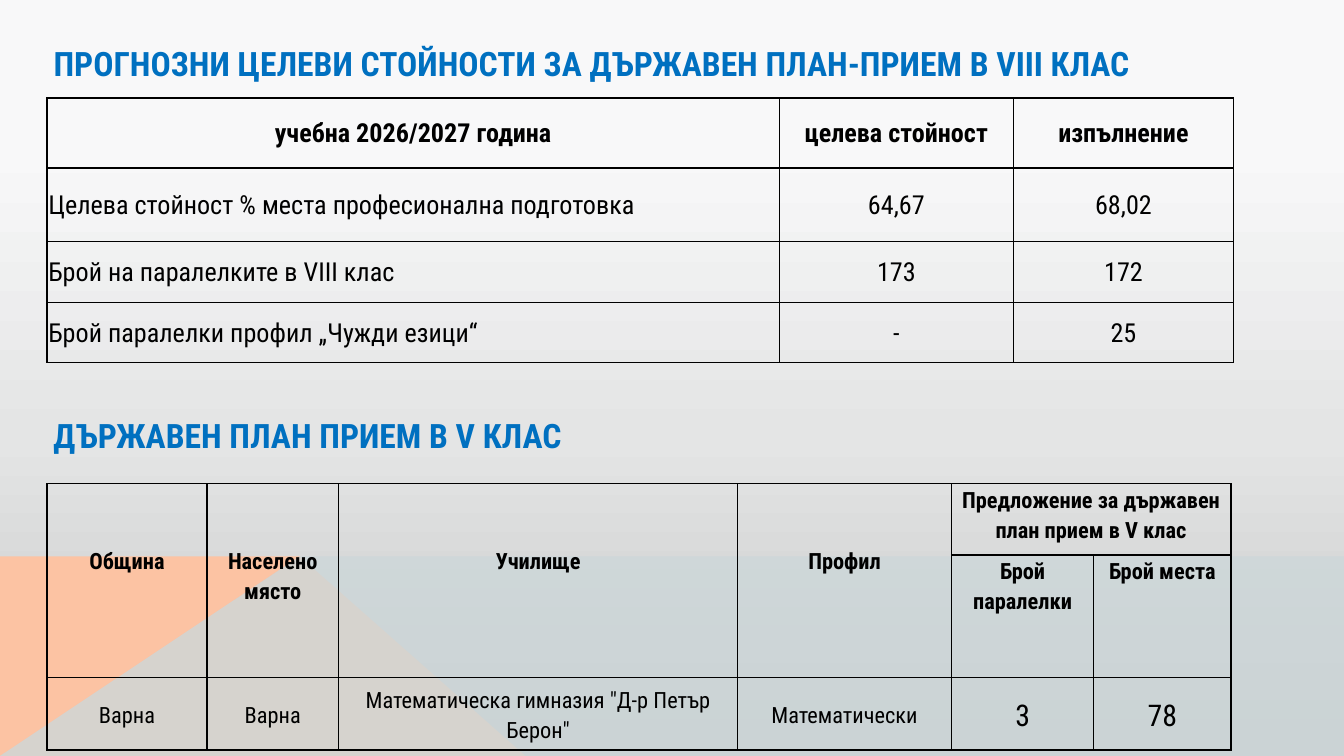
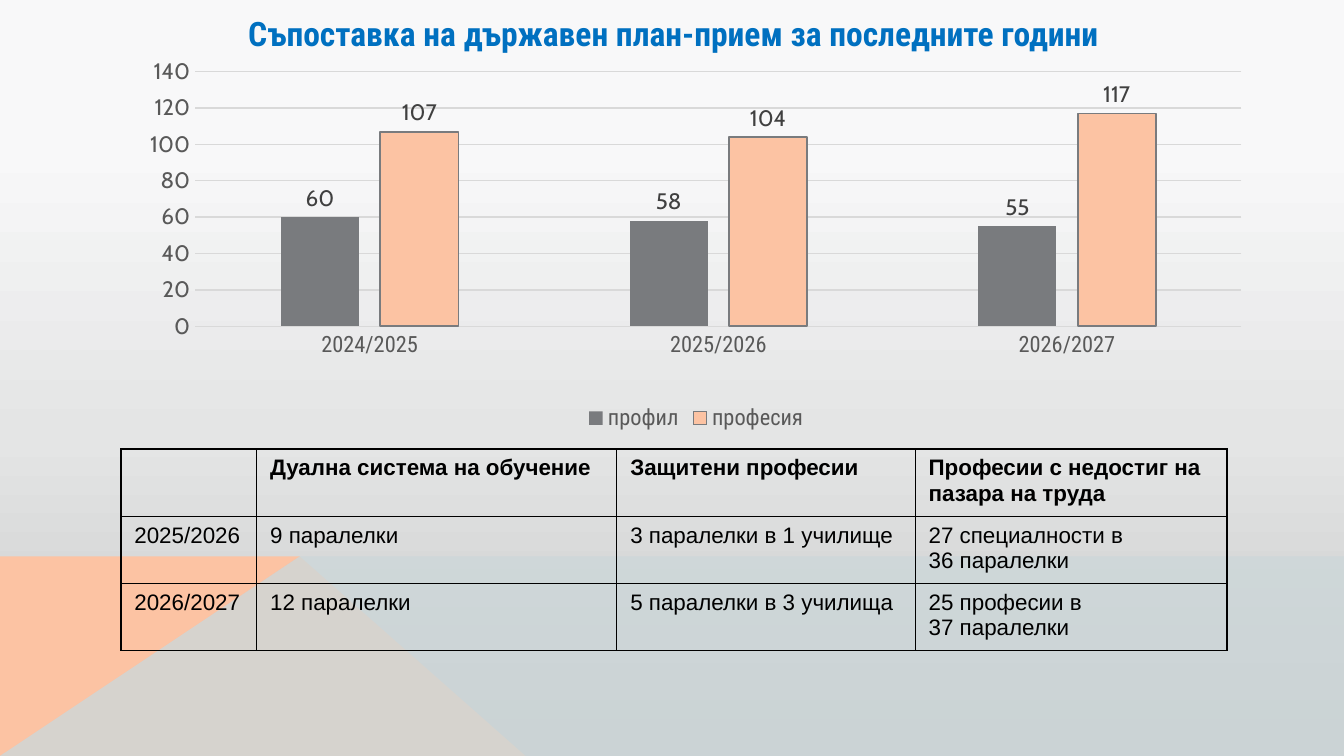
from dataclasses import dataclass
from typing import Optional

import lxml.etree
import pptx
import pptx.chart.chart
import pptx.chart.data
import pptx.dml.color
import pptx.dml.fill
import pptx.enum.chart
import pptx.enum.text
import pptx.oxml.ns
import pptx.slide
import pptx.table
import pptx.text.text
import pptx.util

ALIGN = pptx.enum.text.PP_ALIGN
ANCHOR = pptx.enum.text.MSO_ANCHOR
GRID_COLUMNS, GRID_ROWS = 100, 56.25
GRID_STEP = pptx.util.Inches(0.1)


@dataclass(frozen=True)
class Theme:
    heading: str = "0070C0"
    text: str = "000000"
    axis_text: str = "595959"
    label_text: str = "404040"
    grid_line: str = "D9D9D9"
    grey: str = "797B7E"
    peach: str = "FCC3A3"
    mist: str = "CDD7D9"
    background: tuple[tuple[int, str], ...] = (
        (19, "F8F8F9"), (58, "E4E5E5"), (100, "C3C4C5"), (100, "D7D7D8"))
    main_font: str = "Roboto Condensed"
    number_font: str = "Cabin"
    plain_font: str = "Arial"
    heading_size: float = 18
    large_size: float = 16
    table_size: float = 14
    small_size: float = 12
    thin_line: float = 0.75


THEME = Theme()


@dataclass(frozen=True)
class Box:
    """A place on the grid, in columns and rows."""
    left: float
    top: float
    width: float
    height: float

    def lengths(self) -> tuple[int, int, int, int]:
        return grid(self.left), grid(self.top), grid(self.width), grid(self.height)


@dataclass(frozen=True)
class Cell:
    text: str
    bold: bool = False
    alignment: ALIGN = ALIGN.CENTER
    size: Optional[float] = None
    anchor: Optional[ANCHOR] = None
    margin_top: Optional[float] = None
    row_span: int = 1
    column_span: int = 1


@dataclass(frozen=True)
class TableSpec:
    left: float
    top: float
    columns: tuple[float, ...]
    rows: tuple[float, ...]
    cells: tuple[tuple[Optional[Cell], ...], ...]
    size: float
    font: str = THEME.main_font
    side_margin: float = 0
    margin_top: float = 0
    margin_bottom: float = 0
    line_spacing: float = 1.0
    anchor: ANCHOR = ANCHOR.MIDDLE


@dataclass(frozen=True)
class SeriesSpec:
    name: str
    values: tuple[int, ...]
    color: str
    outline: Optional[str] = None


def grid(steps: float) -> int:
    return round(steps * GRID_STEP)


def rgb(color: str) -> pptx.dml.color.RGBColor:
    return pptx.dml.color.RGBColor.from_string(color)


def add_xml(parent: lxml.etree._Element, tag: str, **attributes: str) -> lxml.etree._Element:
    return lxml.etree.SubElement(parent, pptx.oxml.ns.qn(tag), attributes)


def set_solid(fill: pptx.dml.fill.FillFormat, color: str) -> None:
    fill.solid()
    fill.fore_color.rgb = rgb(color)


def set_font(font: pptx.text.text.Font, *, name: str, color: str,
             size: float = THEME.small_size, bold: bool = False) -> None:
    font.name, font.size, font.bold = name, pptx.util.Pt(size), bold
    font.color.rgb = rgb(color)


def write_text(frame: pptx.text.text.TextFrame, text: str, *, name: str = THEME.main_font,
               size: float, color: str = THEME.text, bold: bool = False,
               alignment: ALIGN = ALIGN.LEFT, line_spacing: float = 1.0) -> None:
    frame.word_wrap = True
    frame.text = text
    for paragraph in frame.paragraphs:
        paragraph.alignment = alignment
        paragraph.line_spacing = line_spacing
        for run in paragraph.runs:
            set_font(run.font, name=name, color=color, size=size, bold=bold)


def set_background(presentation: pptx.presentation.Presentation) -> None:
    master = presentation.slide_master
    fill = master.background.fill
    fill.gradient()
    fill.gradient_angle = 270
    stops = master.element.xpath(".//p:bg//a:gsLst")[0]
    for stop in list(stops):
        stops.remove(stop)
    for position, color in THEME.background:
        stop = add_xml(stops, "a:gs", pos=str(position * 1000))
        add_xml(stop, "a:srgbClr", val=color)


def add_slope(slide: pptx.slide.Slide, points: list[tuple[float, float]], color: str,
              opacity: int = 100) -> None:
    start, *others = [(grid(x), grid(y)) for x, y in points]
    builder = slide.shapes.build_freeform(*start)
    builder.add_line_segments(others, close=True)
    shape = builder.convert_to_shape()
    shape.shadow.inherit = False
    shape.line.fill.background()
    set_solid(shape.fill, color)
    if opacity < 100:
        color_element = shape.element.xpath("./p:spPr/a:solidFill/a:srgbClr")[0]
        add_xml(color_element, "a:alpha", val=str(opacity * 1000))


def add_base_slide(presentation: pptx.presentation.Presentation) -> pptx.slide.Slide:
    """Add a blank slide with the two slopes along its foot."""
    slide = presentation.slides.add_slide(presentation.slide_layouts[6])
    horizon, peak = 41.4, 22.3
    foot = (0, GRID_ROWS)
    add_slope(slide, [foot, (0, horizon), (peak, horizon), (39.1, GRID_ROWS)], THEME.peach)
    add_slope(slide, [foot, (peak, horizon), (GRID_COLUMNS, horizon),
                      (GRID_COLUMNS, GRID_ROWS)], THEME.mist, opacity=80)
    return slide


def add_heading(slide: pptx.slide.Slide, box: Box, text: str,
                alignment: ALIGN = ALIGN.LEFT) -> None:
    frame = slide.shapes.add_textbox(*box.lengths()).text_frame
    frame.vertical_anchor = ANCHOR.MIDDLE
    write_text(frame, text, size=THEME.heading_size, color=THEME.heading, bold=True,
               alignment=alignment)


def set_borders(cell: pptx.table._Cell) -> None:
    properties = cell._tc.get_or_add_tcPr()
    for index, side in enumerate(("a:lnL", "a:lnR", "a:lnT", "a:lnB")):
        line = add_xml(properties, side, w=str(pptx.util.Pt(THEME.thin_line)))
        add_xml(add_xml(line, "a:solidFill"), "a:srgbClr", val=THEME.text)
        properties.insert(index, line)


def fill_cell(cell: pptx.table._Cell, content: Cell, spec: TableSpec) -> None:
    margin_top = spec.margin_top if content.margin_top is None else content.margin_top
    cell.margin_left = cell.margin_right = grid(spec.side_margin)
    cell.margin_top, cell.margin_bottom = grid(margin_top), grid(spec.margin_bottom)
    cell.vertical_anchor = content.anchor or spec.anchor
    write_text(cell.text_frame, content.text, name=spec.font, size=content.size or spec.size,
               bold=content.bold, alignment=content.alignment, line_spacing=spec.line_spacing)


def add_table(slide: pptx.slide.Slide, spec: TableSpec) -> None:
    box = Box(spec.left, spec.top, sum(spec.columns), sum(spec.rows))
    table = slide.shapes.add_table(len(spec.rows), len(spec.columns), *box.lengths()).table
    table.first_row = table.horz_banding = False
    for column, width in zip(table.columns, spec.columns):
        column.width = grid(width)
    for row, height in zip(table.rows, spec.rows):
        row.height = grid(height)
    for row_index, row in enumerate(spec.cells):
        for column_index, content in enumerate(row):
            cell = table.cell(row_index, column_index)
            cell.fill.background()
            set_borders(cell)
            if content is None:
                continue
            fill_cell(cell, content, spec)
            if content.row_span * content.column_span > 1:
                cell.merge(table.cell(row_index + content.row_span - 1,
                                      column_index + content.column_span - 1))


def place_plot(chart: pptx.chart.chart.Chart, left: float, top: float, width: float,
               height: float) -> None:
    """Fix the inner plot area, in shares of the chart's size."""
    area = chart.element.xpath(".//c:plotArea")[0]
    for old_layout in area.xpath("./c:layout"):
        area.remove(old_layout)
    layout = add_xml(area, "c:layout")
    area.insert(0, layout)
    manual = add_xml(layout, "c:manualLayout")
    settings = {"layoutTarget": "inner", "xMode": "edge", "yMode": "edge",
                "x": left, "y": top, "w": width, "h": height}
    for tag, value in settings.items():
        add_xml(manual, f"c:{tag}", val=str(value))


def add_column_chart(slide: pptx.slide.Slide, box: Box, categories: tuple[str, ...],
                     series_specs: tuple[SeriesSpec, ...]) -> None:
    data = pptx.chart.data.CategoryChartData()
    data.categories = categories
    for spec in series_specs:
        data.add_series(spec.name, spec.values)
    chart = slide.shapes.add_chart(pptx.enum.chart.XL_CHART_TYPE.COLUMN_CLUSTERED,
                                   *box.lengths(), data).chart
    chart.has_title = False
    set_font(chart.font, name=THEME.number_font, color=THEME.text)
    chart.has_legend = True
    chart.legend.position = pptx.enum.chart.XL_LEGEND_POSITION.BOTTOM
    chart.legend.include_in_layout = False
    set_font(chart.legend.font, name=THEME.main_font, color=THEME.axis_text)
    place_plot(chart, 0.05, 0.04, 0.94, 0.67)

    category_axis, value_axis = chart.category_axis, chart.value_axis
    for axis, font in ((category_axis, THEME.main_font), (value_axis, THEME.number_font)):
        axis.major_tick_mark = pptx.enum.chart.XL_TICK_MARK.NONE
        set_font(axis.tick_labels.font, name=font, color=THEME.axis_text)
    value_axis.minimum_scale, value_axis.maximum_scale, value_axis.major_unit = 0, 140, 20
    value_axis.format.line.fill.background()
    for line in (category_axis.format.line, value_axis.major_gridlines.format.line):
        line.color.rgb = rgb(THEME.grid_line)
        line.width = pptx.util.Pt(THEME.thin_line)

    plot = chart.plots[0]
    plot.gap_width, plot.overlap, plot.vary_by_categories = 219, -27, False
    for series, spec in zip(plot.series, series_specs):
        set_solid(series.format.fill, spec.color)
        if spec.outline:
            series.format.line.color.rgb = rgb(spec.outline)
            series.format.line.width = pptx.util.Pt(1)
        else:
            series.format.line.fill.background()
        labels = series.data_labels
        labels.show_value = True
        labels.position = pptx.enum.chart.XL_LABEL_POSITION.OUTSIDE_END
        set_font(labels.font, name=THEME.number_font, color=THEME.label_text)


def build_targets_slide(presentation: pptx.presentation.Presentation) -> None:
    slide = add_base_slide(presentation)
    add_heading(slide, Box(3, 2.4, 88.2, 4.6),
                "ПРОГНОЗНИ ЦЕЛЕВИ СТОЙНОСТИ ЗА ДЪРЖАВЕН ПЛАН-ПРИЕМ В VIII КЛАС")
    header = ("учебна 2026/2027 година", "целева стойност", "изпълнение")
    targets = (("Целева стойност % места професионална подготовка", "64,67", "68,02"),
               ("Брой на паралелките в VIII клас", "173", "172"),
               ("Брой паралелки профил „Чужди езици“", "-", "25"))
    cells = (tuple(Cell(text, bold=True) for text in header),
             *((Cell(name, alignment=ALIGN.LEFT), Cell(target), Cell(result))
               for name, target, result in targets))
    add_table(slide, TableSpec(3.5, 7.3, (54.5, 17.4, 16.4), (5.2, 5.5, 4.5, 4.5), cells,
                               THEME.table_size, side_margin=0.1, margin_top=0.1))

    add_heading(slide, Box(3, 30.4, 47.3, 4), "ДЪРЖАВЕН ПЛАН ПРИЕМ В V КЛАС")
    tall_headers = tuple(Cell(text, bold=True, anchor=ANCHOR.TOP, margin_top=4.5, row_span=2)
                         for text in ("Община", "Населено място", "Училище", "Профил"))
    proposal = Cell("Предложение за държавен план прием в V клас", bold=True,
                    anchor=ANCHOR.TOP, column_span=2)
    counts = tuple(Cell(text, bold=True, anchor=ANCHOR.TOP)
                   for text in ("Брой паралелки", "Брой места"))
    school = ("Варна", "Варна", 'Математическа гимназия "Д-р Петър Берон"', "Математически")
    cells = ((*tall_headers, proposal, None),
             (None,) * len(tall_headers) + counts,
             (*map(Cell, school), *(Cell(text, size=THEME.large_size) for text in ("3", "78"))))
    add_table(slide, TableSpec(3.5, 36, (11.9, 9.8, 29.7, 15.9, 10.6, 10.2), (5.3, 9, 5.4),
                               cells, THEME.small_size, line_spacing=1.15))


def build_comparison_slide(presentation: pptx.presentation.Presentation) -> None:
    slide = add_base_slide(presentation)
    add_heading(slide, Box(7, 0, 86.2, 4.9),
                "Съпоставка на държавен план-прием за последните години", ALIGN.CENTER)
    add_column_chart(slide, Box(10.4, 4.2, 82.8, 28.3), ("2024/2025", "2025/2026", "2026/2027"),
                     (SeriesSpec("профил", (60, 58, 55), THEME.grey),
                      SeriesSpec("професия", (107, 104, 117), THEME.peach, THEME.grey)))
    rows = (("", "Дуална система на обучение", "Защитени професии",
             "Професии с недостиг на пазара на труда"),
            ("2025/2026", "9 паралелки", "3 паралелки в 1 училище",
             "27 специалности в\n36 паралелки"),
            ("2026/2027", "12 паралелки", "5 паралелки в 3 училища",
             "25 професии в\n37 паралелки"))
    cells = tuple(tuple(Cell(text, bold=index == 0, alignment=ALIGN.LEFT) for text in row)
                  for index, row in enumerate(rows))
    add_table(slide, TableSpec(9, 33.4, (10.1, 26.8, 22.2, 23.2), (4.7,) * len(rows), cells,
                               THEME.small_size, font=THEME.plain_font, side_margin=1,
                               margin_top=0.5, margin_bottom=0.5, anchor=ANCHOR.TOP))


def main() -> None:
    presentation = pptx.Presentation()
    presentation.slide_width = grid(GRID_COLUMNS)
    presentation.slide_height = grid(GRID_ROWS)
    set_background(presentation)
    build_targets_slide(presentation)
    build_comparison_slide(presentation)
    presentation.save("out.pptx")


if __name__ == "__main__":
    main()
